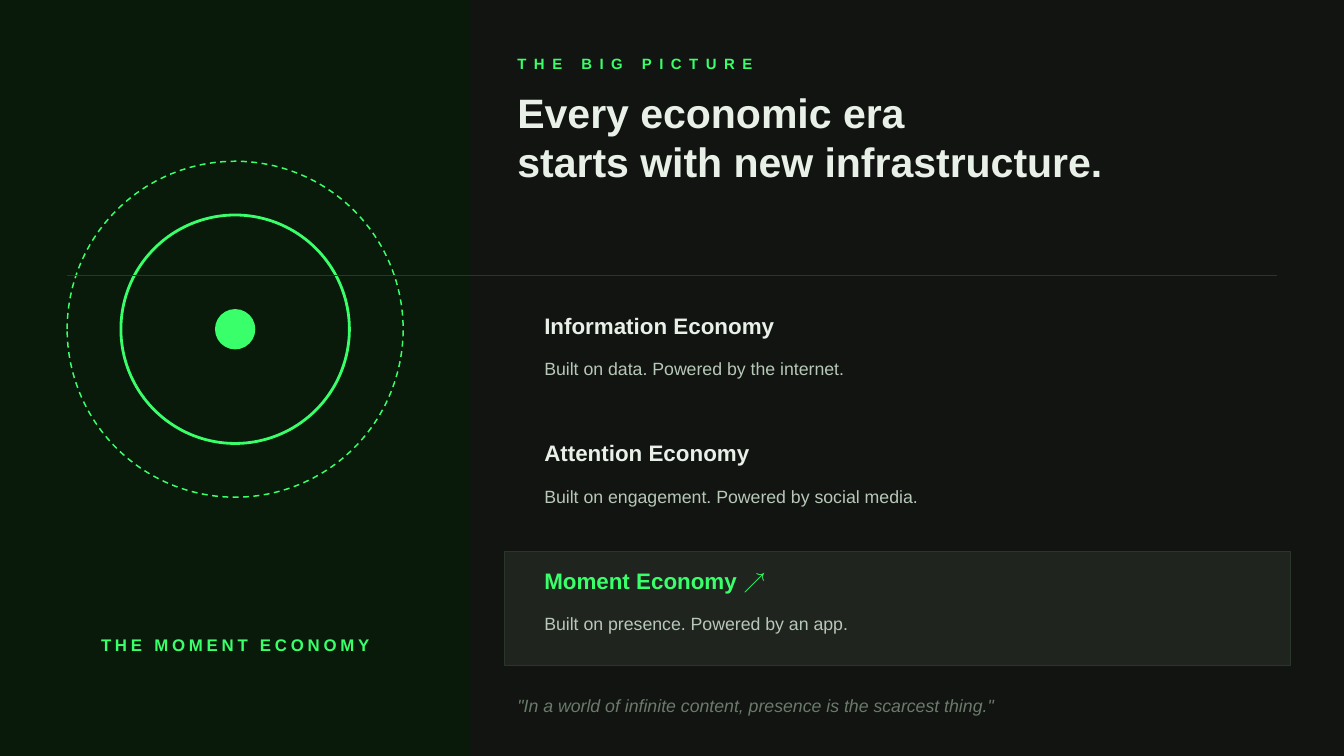
from pptx import Presentation
from pptx.dml.color import RGBColor
from pptx.enum.dml import MSO_LINE
from pptx.enum.shapes import MSO_CONNECTOR, MSO_SHAPE
from pptx.enum.text import MSO_ANCHOR, PP_ALIGN
from pptx.util import Pt
from lxml.etree import SubElement
from pptx.oxml.ns import qn

INK = {
    "back": "111411", "side": "0A1A0A", "card": "1F241F", "rule": "2A362A",
    "green": "39FF6A", "head": "E8F0E8", "body": "B8C8B8", "quote": "6B7A6B",
}

deck = Presentation()
deck.slide_width, deck.slide_height = Pt(720), Pt(405)
slide = deck.slides.add_slide(deck.slide_layouts[6])
slide.background.fill.solid()
slide.background.fill.fore_color.rgb = RGBColor.from_string(INK["back"])


def write(text, box, size=9.5, ink="body", bold=False, italic=False,
          space=0, align=PP_ALIGN.LEFT, anchor=MSO_ANCHOR.MIDDLE):
    frame = slide.shapes.add_textbox(*map(Pt, box)).text_frame
    frame.word_wrap = True
    frame.vertical_anchor = anchor
    frame.margin_left = frame.margin_right = 0
    frame.margin_top = frame.margin_bottom = 0
    for row, line in enumerate(text.split("\n")):
        para = frame.paragraphs[0] if row == 0 else frame.add_paragraph()
        para.alignment = align
        run = para.add_run()
        run.text = line
        font = run.font
        font.name, font.size = "Arial", Pt(size)
        font.bold, font.italic = bold, italic
        font.color.rgb = RGBColor.from_string(INK[ink])
        if space:
            run._r.get_or_add_rPr().set("spc", str(space * 100))


def draw(kind, box, fill=None, line=None, width=0.5, dash=None):
    shape = slide.shapes.add_shape(kind, *map(Pt, box))
    shape.shadow.inherit = False
    if fill:
        shape.fill.solid()
        shape.fill.fore_color.rgb = RGBColor.from_string(INK[fill])
    else:
        shape.fill.background()
    if line:
        shape.line.color.rgb = RGBColor.from_string(INK[line])
        shape.line.width = Pt(width)
        if dash:
            shape.line.dash_style = dash
    else:
        shape.line.fill.background()


draw(MSO_SHAPE.RECTANGLE, (0, 0, 252, 405), fill="side")

mid_x, mid_y = 126, 176.4
for size, look in [
    (180, {"line": "green", "width": 0.8, "dash": MSO_LINE.DASH}),
    (122.4, {"line": "green", "width": 1.5}),
    (21.6, {"fill": "green"}),
]:
    box = (mid_x - size / 2, mid_y - size / 2, size, size)
    draw(MSO_SHAPE.OVAL, box, **look)

write("THE MOMENT ECONOMY", (14.4, 324, 223.2, 43.2), size=9, ink="green",
      bold=True, space=2, align=PP_ALIGN.CENTER)
write("THE BIG PICTURE", (277.2, 25.2, 417.6, 18), size=8, ink="green",
      bold=True, space=4)
write("Every economic era\nstarts with new infrastructure.",
      (277.2, 46.8, 417.6, 86.4), size=22, ink="head", bold=True,
      anchor=MSO_ANCHOR.TOP)

rule = slide.shapes.add_connector(
    MSO_CONNECTOR.STRAIGHT, Pt(36), Pt(147.6), Pt(684), Pt(147.6))
rule.line.color.rgb = RGBColor.from_string(INK["rule"])
rule.line.width = Pt(0.5)
SubElement(rule._element.spPr, qn("a:effectLst"))

draw(MSO_SHAPE.RECTANGLE, (270, 295.2, 421.2, 61.2), fill="card", line="rule")

eras = [
    ("Information Economy", "Built on data. Powered by the internet.", "head"),
    ("Attention Economy", "Built on engagement. Powered by social media.", "head"),
    ("Moment Economy ↗", "Built on presence. Powered by an app.", "green"),
]
for row, (name, note, ink) in enumerate(eras):
    top = 163.44 + row * 68.4
    write(name, (291.6, top, 396, 21.6), size=12, ink=ink, bold=True)
    write(note, (291.6, top + 23.76, 396, 20.16))

write('"In a world of infinite content, presence is the scarcest thing."',
      (277.2, 363.6, 414, 28.8), ink="quote", italic=True)

deck.save("out.pptx")
